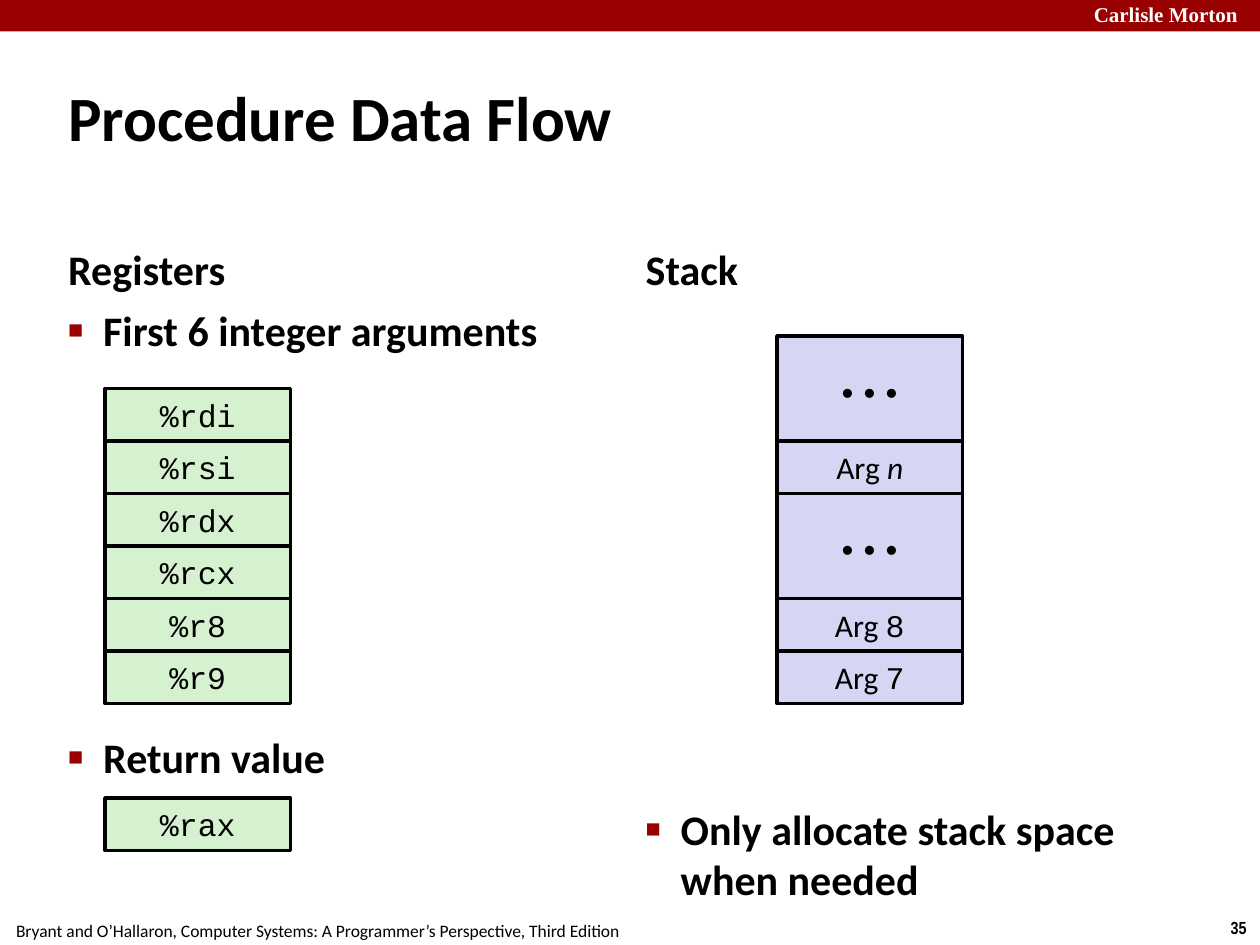
from lxml.etree import SubElement
from pptx import Presentation
from pptx.dml.color import RGBColor
from pptx.enum.shapes import MSO_SHAPE as Shape
from pptx.enum.text import MSO_ANCHOR as Anchor, PP_ALIGN as Align
from pptx.oxml.ns import qn
from pptx.util import Pt

COLORS = {"red": "990000", "black": "000000", "white": "FFFFFF",
          "register": "D5F1CF", "stack": "D6D6F4"}
CELL_WIDTH, CELL_HEIGHT = 106, 30
BULLET_INDENT = 20
DOTS = [("• • •", "Cabin", False)]


def color(name):
    """Return the named colour."""
    return RGBColor.from_string(COLORS[name])


def style_frame(frame, anchor, inset):
    """Set the anchor and equal insets of a wrapping text frame."""
    frame.word_wrap = True
    frame.vertical_anchor = anchor
    frame.margin_left = frame.margin_right = Pt(inset)
    frame.margin_top = frame.margin_bottom = Pt(inset)


def style_font(font, size, name="Calibri", bold=False, fill="black"):
    """Set the size, typeface, weight and colour of a font."""
    font.size, font.name, font.bold = Pt(size), name, bold
    font.color.rgb = color(fill)


def add_bullet(paragraph):
    """Give a paragraph a small red square bullet with a hanging indent."""
    properties = paragraph._p.get_or_add_pPr()
    properties.set("marL", str(Pt(BULLET_INDENT)))
    properties.set("indent", str(-Pt(BULLET_INDENT)))
    bullet_color = SubElement(properties, qn("a:buClr"))
    SubElement(bullet_color, qn("a:srgbClr"), val=COLORS["red"])
    SubElement(properties, qn("a:buSzPct"), val="60000")
    SubElement(properties, qn("a:buFont"), typeface="Arial")
    SubElement(properties, qn("a:buChar"), char="■")


def add_text(slide, box, lines, size=24, name="Calibri", bold=True, fill="black",
             anchor=Anchor.TOP, inset=3):
    """Add a text box with one paragraph for each line and return its frame."""
    frame = slide.shapes.add_textbox(*map(Pt, box)).text_frame
    style_frame(frame, anchor, inset)
    frame.text = "\n".join(lines)
    for paragraph in frame.paragraphs:
        style_font(paragraph.runs[0].font, size, name, bold, fill)
    return frame


def add_bullets(slide, box, lines, gap=6):
    """Add bulleted lines, with the given space before each later one."""
    frame = add_text(slide, box, lines)
    for index, paragraph in enumerate(frame.paragraphs):
        paragraph.space_before = Pt(gap if index else 6)
        add_bullet(paragraph)


def add_cells(shapes, left, top, cells, fill):
    """Stack bordered cells downwards, each given as runs and a row count."""
    for runs, rows in cells:
        height = rows * CELL_HEIGHT
        cell = shapes.add_shape(Shape.RECTANGLE, Pt(left), Pt(top),
                                Pt(CELL_WIDTH), Pt(height))
        cell.shadow.inherit = False
        cell.fill.solid()
        cell.fill.fore_color.rgb = color(fill)
        cell.line.color.rgb = color("black")
        cell.line.width = Pt(2)
        style_frame(cell.text_frame, Anchor.MIDDLE, 3 if rows == 1 else 0)
        paragraph = cell.text_frame.paragraphs[0]
        paragraph.alignment = Align.CENTER
        for text, name, italic in runs:
            run = paragraph.add_run()
            run.text = text
            style_font(run.font, 18 if rows == 1 else 24, name)
            run.font.italic = italic
        top += height


def register_cells(*names):
    """Return one cell in code type for each register name."""
    return [([(name, "Courier New", False)], 1) for name in names]


def argument_cell(label, name, italic=False):
    """Return a cell for one stack argument."""
    return [("Arg ", "Calibri", False), (label, name, italic)], 1


def add_frame(slide, width, height):
    """Add the top band, the footer and the slide number."""
    band = slide.shapes.add_shape(Shape.RECTANGLE, 0, 0, Pt(width), Pt(18))
    band.shadow.inherit = False
    band.fill.solid()
    band.fill.fore_color.rgb = color("red")
    band.line.fill.background()
    add_text(slide, (width - 98, -2, 98, 20), ["Carlisle Morton"], 12,
             "Times New Roman", fill="white")
    footers = [
        ((-1.5, height - 18, 366, 19.5), "Calibri", False,
         "Bryant and O’Hallaron, Computer Systems: A Programmer’s Perspective, Third Edition"),
        ((width - 24.5, height - 19.5, 24.5, 19.5), "Arial Narrow", True, "35"),
    ]
    for box, name, bold, text in footers:
        frame = add_text(slide, box, [text], 10, name, bold, inset=3.6)
        frame.word_wrap = False
        frame.paragraphs[0].alignment = Align.CENTER


def add_registers(slide, left, top, width):
    """Add the column on registers."""
    add_text(slide, (left, top, width, 50), ["Registers"], anchor=Anchor.BOTTOM)
    add_bullets(slide, (left, top + 50, width, 311),
                ["First 6 integer arguments", "Return value"], gap=215)
    arguments = register_cells("%rdi", "%rsi", "%rdx", "%rcx", "%r8", "%r9")
    add_cells(slide.shapes, left + 24, top + 101, arguments, "register")
    add_cells(slide.shapes, left + 24, top + 335, register_cells("%rax"), "register")


def add_stack(slide, left, top, width):
    """Add the column on the stack."""
    add_text(slide, (left, top, width, 50), ["Stack"], anchor=Anchor.BOTTOM)
    add_bullets(slide, (left, top + 335, width, 27),
                ["Only allocate stack space when needed"])
    cells = [(DOTS, 2), argument_cell("n", "Calibri", True), (DOTS, 2),
             argument_cell("8", "Courier New"), argument_cell("7", "Courier New")]
    group = slide.shapes.add_group_shape()
    add_cells(group.shapes, left + 78, top + 71, cells, "stack")


def main():
    """Build the slide and save it."""
    presentation = Presentation()
    presentation.slide_width, presentation.slide_height = Pt(720), Pt(540)
    slide = presentation.slides.add_slide(presentation.slide_layouts[6])
    add_frame(slide, 720, 540)
    add_text(slide, (36, 21.5, 648, 90), ["Procedure Data Flow"], 36,
             anchor=Anchor.MIDDLE)
    add_registers(slide, 36, 121, 318)
    add_stack(slide, 366, 121, 318)
    presentation.save("out.pptx")


if __name__ == "__main__":
    main()
